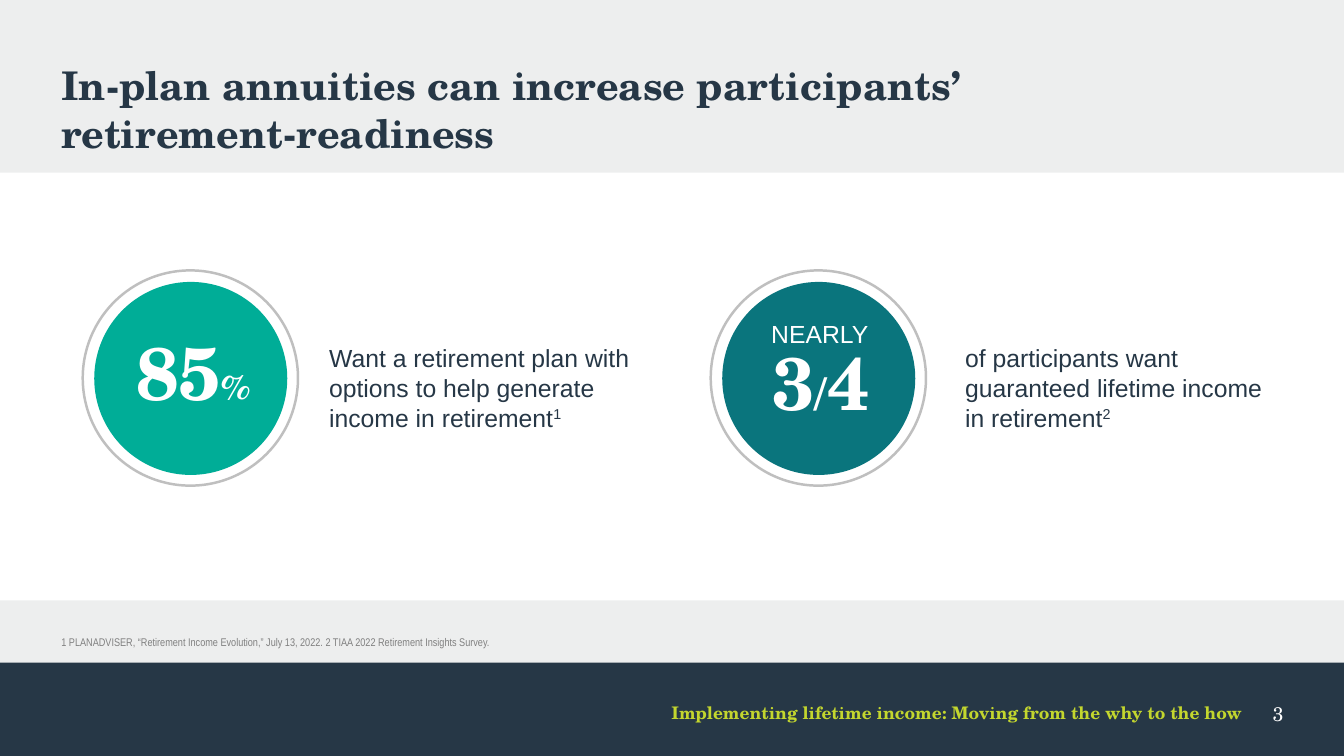
"""Build the slide on in-plan annuities and retirement-readiness."""
import pptx
import pptx.dml.color
import pptx.enum.shapes
import pptx.enum.text
import pptx.util

PX = 9144
ALIGN = pptx.enum.text.PP_ALIGN
ANCHOR = pptx.enum.text.MSO_ANCHOR
SHAPE = pptx.enum.shapes.MSO_SHAPE
THEME = {
    "serif": "TeX Gyre Schola", "sans": "Arial", "narrow": "Arial Narrow",
    "navy": "263746", "white": "FFFFFF", "pale": "EDEEEE", "lime": "C3D62E",
    "grey": "808080", "ring": "BFBFBF", "green": "00AD97", "teal": "0A757D",
    "title": 32, "figure": 60, "slash": 36, "percent": 28, "body": 20,
    "number": 16, "footer": 14, "note": 9,
}


def add_block(shapes, kind, bounds, fill, line=None):
    block = shapes.add_shape(kind, *[n * PX for n in bounds])
    block.shadow.inherit = False
    block.fill.solid()
    block.fill.fore_color.rgb = pptx.dml.color.RGBColor.from_string(THEME[fill])
    if line:
        block.line.color.rgb = pptx.dml.color.RGBColor.from_string(THEME[line])
        block.line.width = pptx.util.Pt(2)
    else:
        block.line.fill.background()


def write_text(box, bounds, spans, font, size, color, bold=False, align=ALIGN.LEFT):
    box.left, box.top, box.width, box.height = [n * PX for n in bounds]
    frame = box.text_frame
    frame.word_wrap = True
    frame.auto_size = pptx.enum.text.MSO_AUTO_SIZE.NONE
    frame.vertical_anchor = ANCHOR.TOP
    frame.margin_left = frame.margin_top = frame.margin_right = frame.margin_bottom = 0
    para = frame.paragraphs[0]
    para.alignment = align
    para.font.name = THEME[font]
    para.font.size = pptx.util.Pt(THEME[size])
    para.font.bold = bold
    para.font.color.rgb = pptx.dml.color.RGBColor.from_string(THEME[color])
    for text, span_size in spans:
        span = para.add_run()
        span.text = text
        if span_size == "superscript":
            span.font._element.set("baseline", "30000")
        elif span_size:
            span.font.size = pptx.util.Pt(THEME[span_size])
    return para


deck = pptx.Presentation()
deck.slide_width, deck.slide_height = 1511 * PX, 850 * PX
page = deck.slides.add_slide(deck.slide_layouts[5])
page.background.fill.solid()
page.background.fill.fore_color.rgb = pptx.dml.color.RGBColor.from_string(THEME["pale"])

add_block(page.shapes, SHAPE.RECTANGLE, (0, 745, 1511, 105), "navy")
add_block(page.shapes, SHAPE.RECTANGLE, (0, 194, 1511, 481), "white")

title = write_text(page.shapes.title, (69, 69, 1374, 113), [],
                   "serif", "title", "navy", bold=True)
for index, line in enumerate(("In-plan annuities can increase participants’",
                              "retirement-readiness")):
    if index:
        title.add_line_break()
    title.add_run().text = line

labels = [
    ((1403, 789, 40, 33), "3", "serif", "number", "white", False, ALIGN.RIGHT),
    ((564, 789, 833, 29), "Implementing lifetime income: Moving from the why to the how",
     "serif", "footer", "lime", True, ALIGN.RIGHT),
    ((69, 688, 662, 41),
     "1 PLANADVISER, “Retirement Income Evolution,” July 13, 2022. "
     "2 TIAA 2022 Retirement Insights Survey.",
     "narrow", "note", "grey", False, ALIGN.LEFT),
]
for bounds, text, *style in labels:
    box = page.shapes.add_textbox(0, 0, 0, 0)
    write_text(box, bounds, [(text, None)], *style)
box.text_frame.vertical_anchor = ANCHOR.BOTTOM

badges = [
    (93, "green", 367, [("85", None), ("%", "percent")], 370,
     "Want a retirement plan with options to help generate income in retirement", "1"),
    (799, "teal", 378, [("3", None), ("/", "slash"), ("4", None)], 1085,
     "of participants want guaranteed lifetime income in retirement", "2"),
]
for left, color, figure_top, figure, text_left, text, note in badges:
    badge = page.shapes.add_group_shape().shapes
    add_block(badge, SHAPE.OVAL, (left, 304, 242, 242), "white", "ring")
    add_block(badge, SHAPE.OVAL, (left + 13, 317, 217, 217), color)
    write_text(badge.add_textbox(0, 0, 0, 0), (left + 46, figure_top, 156, 77),
               figure, "serif", "figure", "white", True, ALIGN.CENTER)
    para = write_text(page.shapes.add_textbox(0, 0, 0, 0), (text_left, 386, 360, 130),
                      [(text, None), (note, "superscript")], "sans", "body", "navy")
    para.line_spacing = pptx.util.Pt(24)

nearly = write_text(page.shapes.add_textbox(0, 0, 0, 0), (867, 359, 117, 70),
                    [("NEARLY", None)], "sans", "body", "white")
nearly.line_spacing = pptx.util.Pt(24)

deck.save("out.pptx")
